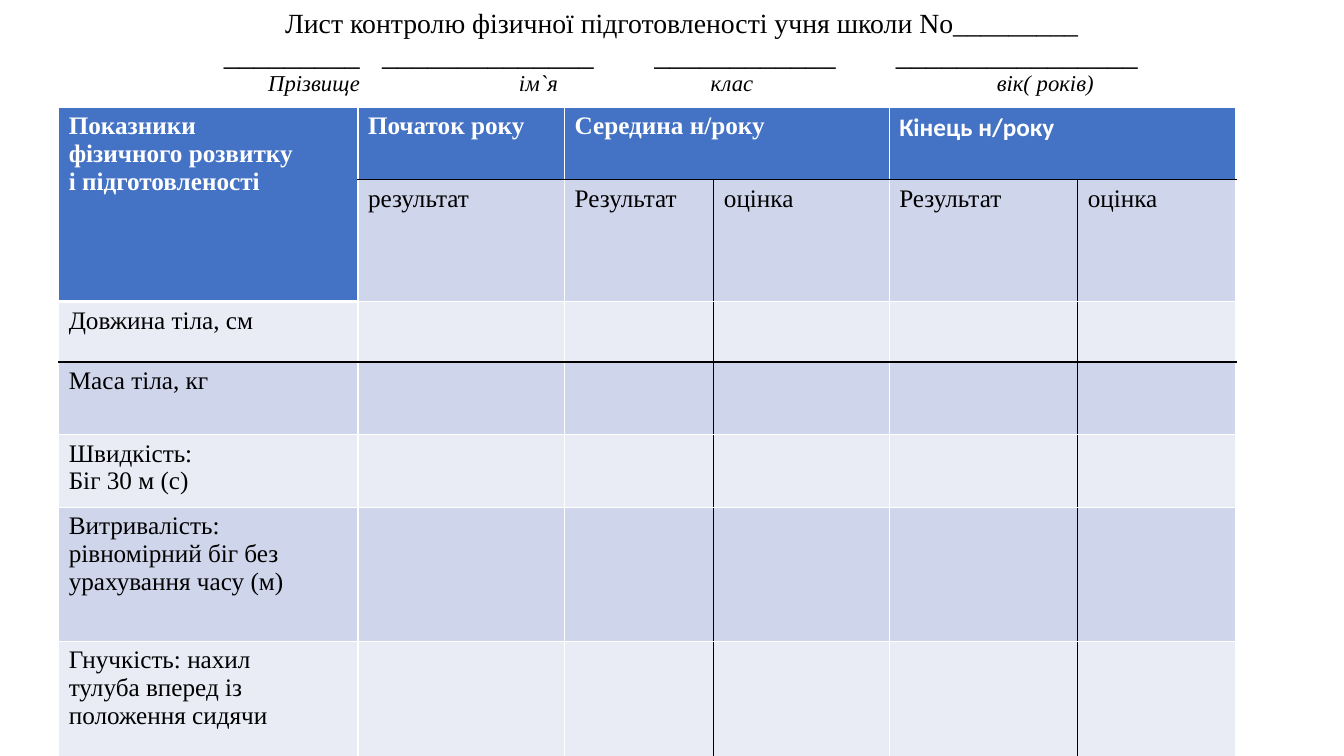
import pptx
import pptx.util
import pptx.dml.color
import pptx.enum.text
import pptx.oxml
import pptx.oxml.ns

Cm = pptx.util.Cm
Pt = pptx.util.Pt

COLORS = {"white": "FFFFFF", "black": "000000", "header": "4472C4",
          "dark_band": "CFD5EA", "light_band": "E9EBF5"}
SERIF = "Times New Roman"

TITLE_BOX = (2.57, 0.23, 29.21, 2.2)
TITLE_LINES = [
    {"parts": ["Лист контролю фізичної підготовленості учня школи No_________"],
     "tabs": [], "font": {"size": Pt(19.8)}},
    {"parts": ["_________", "______________", "____________", "________________"],
     "tabs": [2.82, 6.81, 13.67, 19.76], "font": {"size": Pt(21.6)}},
    {"parts": ["Прізвище", "ім`я", "клас", "вік( років)"],
     "tabs": [3.94, 10.26, 15.09, 22.3], "font": {"size": Pt(16.2), "italic": True}},
]

TABLE_AT = (1.48, 2.7)
COL_WIDTHS = [7.54, 5.21, 3.76, 4.42, 4.75, 3.99]
ROW_HEIGHTS = [1.83, 3.07, 1.52, 1.83, 1.83, 3.38, 2.92]
ROWS = [
    ["Показники\nфізичного розвитку\nі підготовленості", "Початок року",
     "Середина н/року", "", "Кінець н/року", ""],
    ["", "результат", "Результат", "оцінка", "Результат", "оцінка"],
    ["Довжина тіла, см"],
    ["Маса тіла, кг"],
    ["Швидкість:\nБіг 30 м (с)"],
    ["Витривалість:\nрівномірний біг без\nурахування часу (м)"],
    ["Гнучкість: нахил\nтулуба вперед із положення сидячи"],
]
MERGES = [((0, 0), (1, 0)), ((0, 2), (0, 3)), ((0, 4), (0, 5))]
CALIBRI_CELL = (0, 4)


def rgb(name):
    return pptx.dml.color.RGBColor.from_string(COLORS[name])


def format_run(r, color, **values):
    for name, value in values.items():
        setattr(r.font, name, value)
    r.font.color.rgb = rgb(color)


def add_tabs(p, stops):
    tabs = pptx.oxml.parse_xml(f"<a:tabLst {pptx.oxml.ns.nsdecls('a')}/>")
    for stop in stops:
        tabs.append(pptx.oxml.parse_xml(
            f'<a:tab {pptx.oxml.ns.nsdecls("a")} pos="{int(Cm(stop))}" algn="l"/>'))
    p._p.get_or_add_pPr().append(tabs)


def row_edge(edge, col):
    if (edge == 1 and col > 0) or edge == 3:
        return "black", 1
    return "white", 3 if (edge, col) == (2, 0) else 1


def col_edge(row, edge):
    return ("black" if row > 0 and edge in (3, 5) else "white"), 1


def set_borders(cell, row, col):
    bottom = 2 if (row, col) == (0, 0) else row + 1
    edges = {"lnL": col_edge(row, col), "lnR": col_edge(row, col + 1),
             "lnT": row_edge(row, col), "lnB": row_edge(bottom, col)}
    tcPr = cell._tc.get_or_add_tcPr()
    for i, (tag, (color, width)) in enumerate(edges.items()):
        tcPr.insert(i, pptx.oxml.parse_xml(
            f'<a:{tag} {pptx.oxml.ns.nsdecls("a")} w="{int(Pt(width))}">'
            f'<a:solidFill><a:srgbClr val="{COLORS[color]}"/></a:solidFill></a:{tag}>'))


def add_title(s):
    tf = s.shapes.add_textbox(*map(Cm, TITLE_BOX)).text_frame
    tf.word_wrap = True
    tf.margin_top = tf.margin_bottom = 0
    for i, line in enumerate(TITLE_LINES):
        p = tf.add_paragraph() if i else tf.paragraphs[0]
        p.line_spacing = 0.9
        align = pptx.enum.text.PP_ALIGN
        p.alignment = align.LEFT if line["tabs"] else align.CENTER
        if line["tabs"]:
            add_tabs(p, line["tabs"])
        r = p.add_run()
        r.text = ("\t" if line["tabs"] else "") + "\t".join(line["parts"])
        format_run(r, "black", name=SERIF, **line["font"])


def add_control_table(s):
    size = (sum(COL_WIDTHS), sum(ROW_HEIGHTS))
    table = s.shapes.add_table(len(ROWS), len(COL_WIDTHS),
                               *map(Cm, TABLE_AT + size)).table
    table.first_row = table.horz_banding = False
    for column, width in zip(table.columns, COL_WIDTHS):
        column.width = Cm(width)
    for line, height in zip(table.rows, ROW_HEIGHTS):
        line.height = Cm(height)
    for row, texts in enumerate(ROWS):
        for col in range(len(COL_WIDTHS)):
            cell = table.cell(row, col)
            header = row == 0 or (row, col) == (1, 0)
            band = "dark_band" if row % 2 else "light_band"
            cell.fill.solid()
            cell.fill.fore_color.rgb = rgb("header" if header else band)
            set_borders(cell, row, col)
            if col < len(texts) and texts[col]:
                cell.text = texts[col]
            for p in cell.text_frame.paragraphs:
                for r in p.runs:
                    font = "Calibri" if (row, col) == CALIBRI_CELL else SERIF
                    format_run(r, "white" if header else "black",
                               name=font, size=Pt(18), bold=header)
    for first, last in MERGES:
        table.cell(*first).merge(table.cell(*last))


def main():
    prs = pptx.Presentation()
    prs.slide_width, prs.slide_height = Cm(33.87), Cm(19.05)
    s = prs.slides.add_slide(prs.slide_layouts[6])
    add_title(s)
    add_control_table(s)
    prs.save("out.pptx")


if __name__ == "__main__":
    main()
